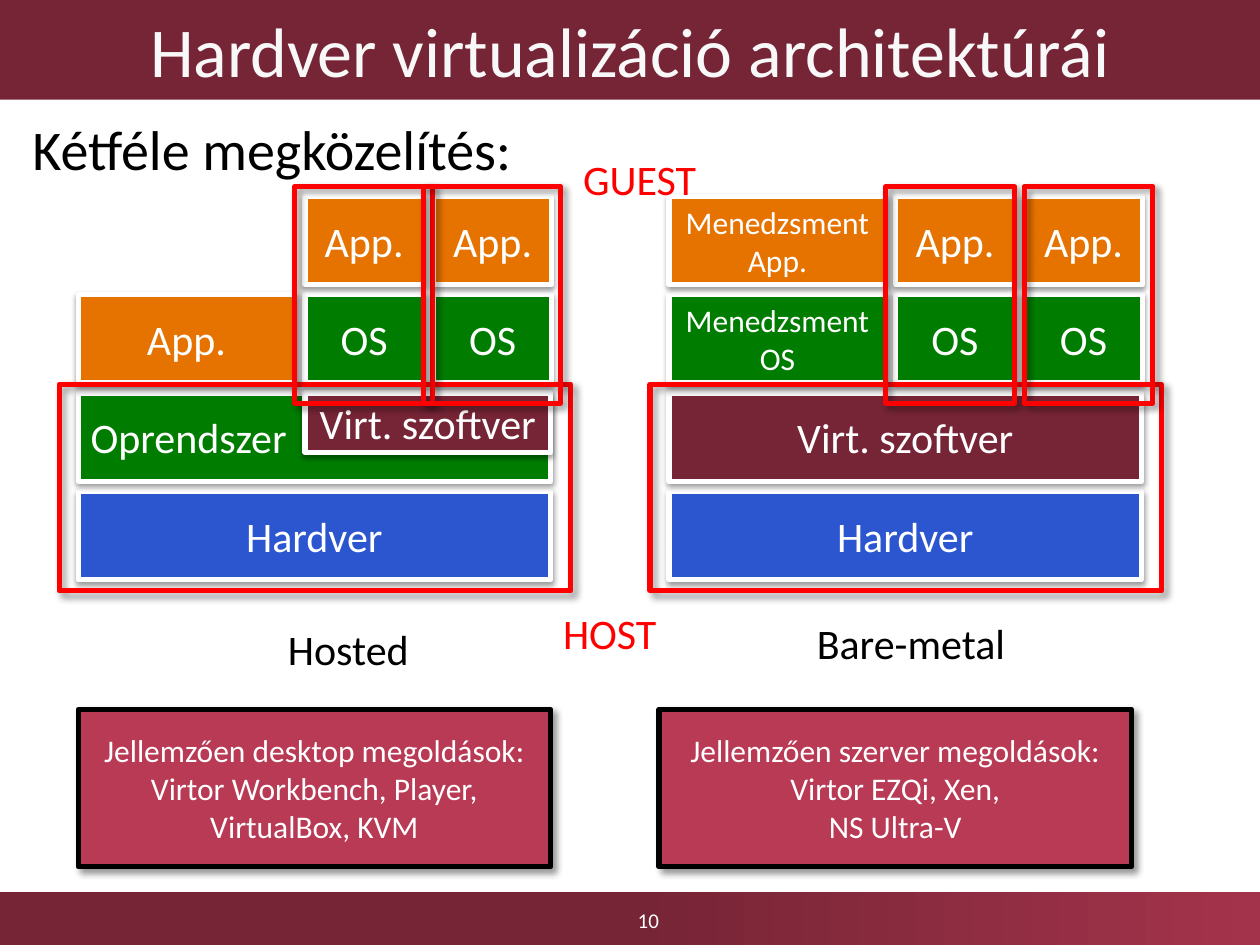
from lxml import etree
from pptx import Presentation
from pptx.dml.color import RGBColor
from pptx.enum.shapes import MSO_SHAPE
from pptx.enum.text import MSO_ANCHOR, PP_ALIGN
from pptx.oxml.ns import qn
from pptx.util import Inches, Pt

RECT = MSO_SHAPE.RECTANGLE
TOP, MIDDLE = MSO_ANCHOR.TOP, MSO_ANCHOR.MIDDLE
LEFT, CENTER = PP_ALIGN.LEFT, PP_ALIGN.CENTER


class Theme:
    font = "Calibri"
    wine, wine_light, rose = "762536", "A3334B", "B83A55"
    orange, green, blue = "E67300", "007D00", "2B56CF"
    red, black, white, title_text = "FF0000", "000000", "FFFFFF", "F8F8F8"
    title, lead, label, small, number = 40, 32, 24, 18, 12
    line = 3
    soft = {"alpha": 38, "blur": 3.1, "dist": 1.6, "dir": 90}
    strong = {"alpha": 40, "blur": 4, "dist": 3, "dir": 45}


ROW_TOP, ROW_STEP, ROW_H = 1.56, 0.78, 0.7
COLS = ((0, 1.72), (1.8, 0.94), (2.82, 0.94))
STACK_W = 3.75
HOSTED_X, BARE_X = 0.62, 5.31


def rgb(color):
    return RGBColor.from_string(color)


def write(sp, text, size, color, align=CENTER, anchor=MIDDLE, wrap=True):
    tf = sp.text_frame
    tf.word_wrap = wrap
    tf.vertical_anchor = anchor
    p = tf.paragraphs[0]
    p.text = text
    p.alignment = align
    formats = {"name": Theme.font, "size": Pt(size)}
    for r in p.runs:
        for name, value in formats.items():
            setattr(r.font, name, value)
        r.font.color.rgb = rgb(color)


def add_shadow(sp, shadow):
    effects = sp._element.spPr.find(qn("a:effectLst"))
    outer = etree.SubElement(effects, qn("a:outerShdw"))
    values = {
        "blurRad": Pt(shadow["blur"]),
        "dist": Pt(shadow["dist"]),
        "dir": shadow["dir"] * 60000,
        "algn": "ctr",
        "rotWithShape": 0,
    }
    for name, value in values.items():
        outer.set(name, str(value))
    color = etree.SubElement(outer, qn("a:srgbClr"), val=Theme.black)
    etree.SubElement(color, qn("a:alpha"), val=str(shadow["alpha"] * 1000))


def add_box(s, at, fill=None, line=None, shadow=None):
    sp = s.shapes.add_shape(RECT, *map(Inches, at))
    if fill:
        sp.fill.solid()
        sp.fill.fore_color.rgb = rgb(fill)
    else:
        sp.fill.background()
    if line:
        sp.line.color.rgb = rgb(line)
        sp.line.width = Pt(Theme.line)
    else:
        sp.line.fill.background()
    sp.shadow.inherit = False
    if shadow:
        add_shadow(sp, shadow)
    return sp


def add_label(s, at, text, size=Theme.label, color=Theme.black, **layout):
    sp = s.shapes.add_textbox(*map(Inches, at))
    write(sp, text, size, color, **{"anchor": TOP, **layout})


def add_block(s, at, text, fill, size=Theme.label, align=CENTER):
    sp = add_box(s, at, fill, Theme.white, Theme.soft)
    write(sp, text, size, Theme.white, align)


def add_layer(s, x, row, text, fill, align=CENTER):
    at = (x, ROW_TOP + row * ROW_STEP, STACK_W, ROW_H)
    add_block(s, at, text, fill, align=align)


def add_cell(s, x, col, row, text, fill, size=Theme.label):
    dx, width = COLS[col]
    add_block(s, (x + dx, ROW_TOP + row * ROW_STEP, width, ROW_H), text, fill, size)


def add_guests(s, x):
    for col in (1, 2):
        add_cell(s, x, col, 1, "OS", Theme.green)
        add_cell(s, x, col, 0, "App.", Theme.orange)


def add_frame(s, at):
    add_box(s, at, line=Theme.red, shadow=Theme.strong)


def add_note(s, x, text):
    sp = add_box(s, (x, 5.63, STACK_W, 1.25), Theme.rose, Theme.black, Theme.strong)
    write(sp, text, Theme.small, Theme.white)


def add_footer(s):
    sp = add_box(s, (0, 7.08, 10, 0.42), Theme.wine)
    sp.fill.gradient()
    sp.fill.gradient_angle = 0
    stops = ((0.5, Theme.wine), (1, Theme.wine_light))
    for stop, (position, color) in zip(sp.fill.gradient_stops, stops):
        stop.position = position
        stop.color.rgb = rgb(color)
    add_label(s, (3.52, 7.11, 3.25, 0.39), "10", Theme.number, Theme.white, anchor=MIDDLE)


def add_hosted(s):
    x = HOSTED_X
    add_layer(s, x, 3, "Hardver", Theme.blue)
    add_layer(s, x, 2, "Oprendszer", Theme.green, LEFT)
    add_block(s, (x + 1.8, 3.12, 1.95, 0.47), "Virt. szoftver", Theme.wine)
    add_cell(s, x, 0, 1, "App.", Theme.orange)
    add_guests(s, x)
    add_label(s, (2.18, 4.9, 1.17, 0.5), "Hosted", wrap=False)
    add_note(s, x, "Jellemzően desktop megoldások: Virtor Workbench, Player,\vVirtualBox, KVM")


def add_bare_metal(s):
    x = BARE_X
    add_layer(s, x, 3, "Hardver", Theme.blue)
    add_layer(s, x, 2, "Virt. szoftver", Theme.wine)
    add_cell(s, x, 0, 1, "Menedzsment OS", Theme.green, Theme.small)
    add_cell(s, x, 0, 0, "Menedzsment App.", Theme.orange, Theme.small)
    add_guests(s, x)
    add_label(s, (x, 4.85, 3.84, 0.5), "Bare-metal")
    add_note(s, 5.23, "Jellemzően szerver megoldások: Virtor EZQi, Xen,\vNS Ultra-V")


def add_frames(s):
    for x in (HOSTED_X, BARE_X):
        add_frame(s, (x - 0.15, 3.05, 4.06, 1.64))
    for x, width in ((2.34, 1.09), (3.36, 1.09), (7.03, 1.02), (8.13, 1.02)):
        add_frame(s, (x, 1.48, width, 1.72))
    for at, text in (((4.37, 4.77, 0.95, 0.5), "HOST"), ((4.53, 1.17, 1.11, 0.5), "GUEST")):
        add_label(s, at, text, color=Theme.red, align=LEFT, wrap=False)


def main():
    prs = Presentation()
    prs.slide_width, prs.slide_height = Inches(10), Inches(7.5)
    s = prs.slides.add_slide(prs.slide_layouts[6])
    add_footer(s)
    title = add_box(s, (0, 0, 10, 0.79), Theme.wine)
    write(title, "Hardver virtualizáció architektúrái", Theme.title, Theme.title_text)
    add_label(s, (0.16, 0.86, 9.84, 0.78), "Kétféle megközelítés:", Theme.lead, align=LEFT)
    add_hosted(s)
    add_bare_metal(s)
    add_frames(s)
    prs.save("out.pptx")


if __name__ == "__main__":
    main()
